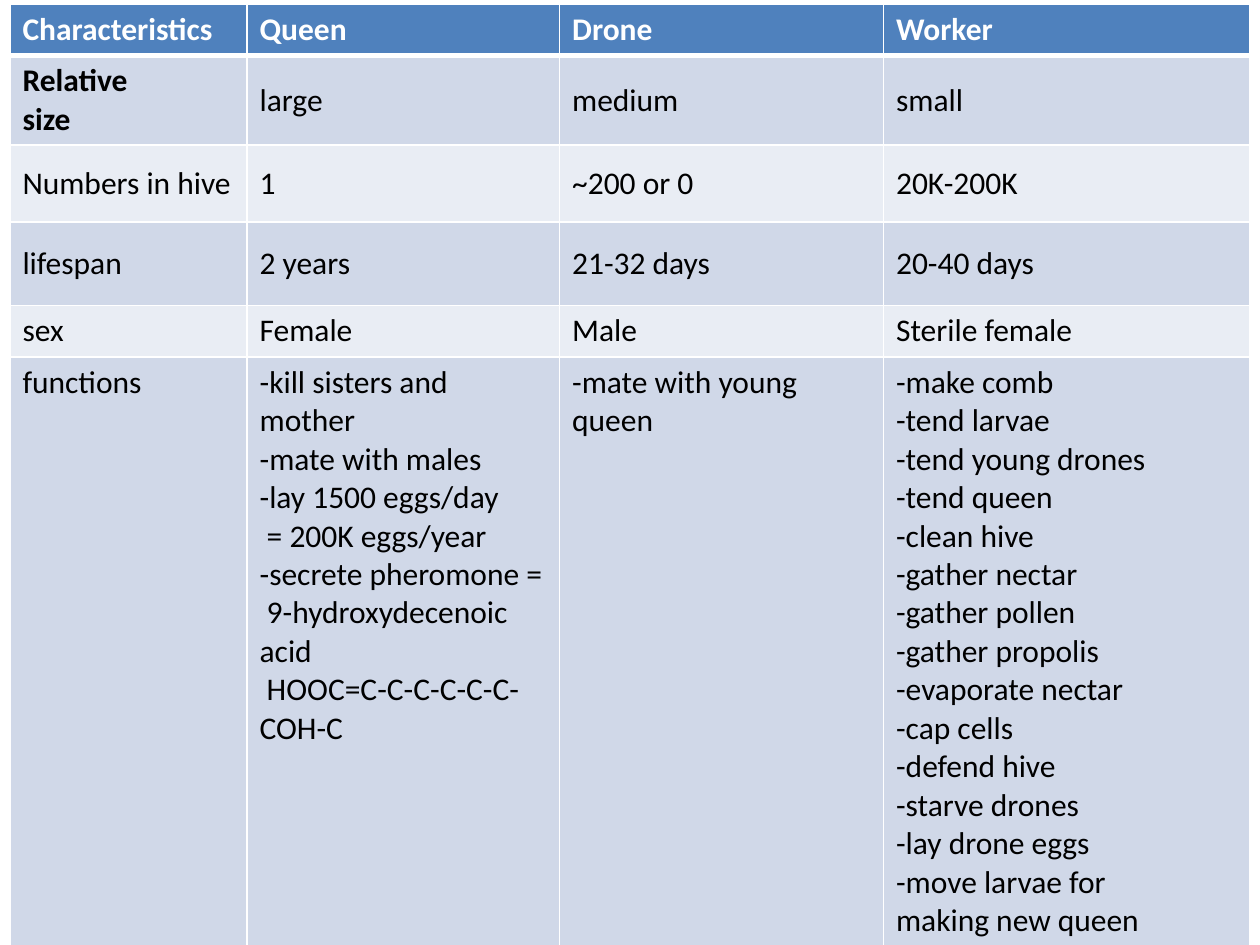
from pptx import Presentation
from pptx.dml.color import RGBColor
from pptx.enum.text import MSO_ANCHOR
from pptx.oxml import parse_xml
from pptx.oxml.ns import nsdecls
from pptx.util import Cm, Pt

TOP, MID = MSO_ANCHOR.TOP, MSO_ANCHOR.MIDDLE
COLORS = {"head": "4F81BD", "dark": "D0D8E8", "light": "E9EDF4",
          "white": "FFFFFF", "black": "000000"}
WIDTHS = [4.78, 6.3, 6.53, 7.39]
HEIGHTS = [1.04, 1.8, 1.55, 1.68, 1.04, 11.63]

QUEEN = """-kill sisters and mother
-mate with males
-lay 1500 eggs/day
 = 200K eggs/year
-secrete pheromone =
 9-hydroxydecenoic acid
 HOOC=C-C-C-C-C-C-COH-C"""
WORKER = """-make comb
-tend larvae
-tend young drones
-tend queen
-clean hive
-gather nectar
-gather pollen
-gather propolis
-evaporate nectar
-cap cells
-defend hive
-starve drones
-lay drone eggs
-move larvae for
making new queen"""
ROWS = [
    ["Characteristics", "Queen", "Drone", "Worker"],
    ["Relative\nsize", "large", "medium", "small"],
    ["Numbers in hive", "1", "~200 or 0", "20K-200K"],
    ["lifespan", "2 years", "21-32 days", "20-40 days"],
    ["sex", "Female", "Male", "Sterile female"],
    ["functions", QUEEN, "-mate with young queen", WORKER],
]


class Deck:
    font = "Calibri"
    size = 18

    def __init__(self, slide):
        self.slide = slide

    def edge(self, cell, side, width):
        cell._tc.get_or_add_tcPr().append(parse_xml(
            f'<a:ln{side} {nsdecls("a")} w="{Pt(width)}"><a:solidFill>'
            f'<a:srgbClr val="{COLORS["white"]}"/></a:solidFill></a:ln{side}>'))

    def cell(self, cell, text, fill, color, bold, anchor, rims):
        for side, width in rims.items():
            self.edge(cell, side, width)
        cell.fill.solid()
        cell.fill.fore_color.rgb = RGBColor.from_string(COLORS[fill])
        cell.vertical_anchor = anchor
        cell.text_frame.text = text.replace("\n", "\v")
        for run in cell.text_frame.paragraphs[0].runs:
            run.font.name = self.font
            run.font.size = Pt(self.size)
            run.font.bold = bold
            run.font.color.rgb = RGBColor.from_string(COLORS[color])

    def table(self, rows, left, top, widths, heights):
        grid = self.slide.shapes.add_table(
            len(rows), len(widths), Cm(left), Cm(top),
            Cm(sum(widths)), Cm(sum(heights))).table
        for col, width in zip(grid.columns, widths):
            col.width = Cm(width)
        for row, height in zip(grid.rows, heights):
            row.height = Cm(height)
        last = len(rows) - 1
        for r, row in enumerate(rows):
            head = r == 0
            fill = "head" if head else "dark" if r % 2 else "light"
            rims = {"L": 1, "R": 1, "T": 3 if r == 1 else 1, "B": 3 if head else 1}
            for c, text in enumerate(row):
                bold = head or (r, c) == (1, 0)
                anchor = TOP if bold or r == last else MID
                self.cell(grid.cell(r, c), text, fill,
                          "white" if head else "black", bold, anchor, rims)


def main():
    prs = Presentation()
    prs.slide_width, prs.slide_height = Cm(25.4), Cm(19.05)
    deck = Deck(prs.slides.add_slide(prs.slide_layouts[6]))
    deck.table(ROWS, 0.2, 0.08, WIDTHS, HEIGHTS)
    prs.save("out.pptx")


if __name__ == "__main__":
    main()
